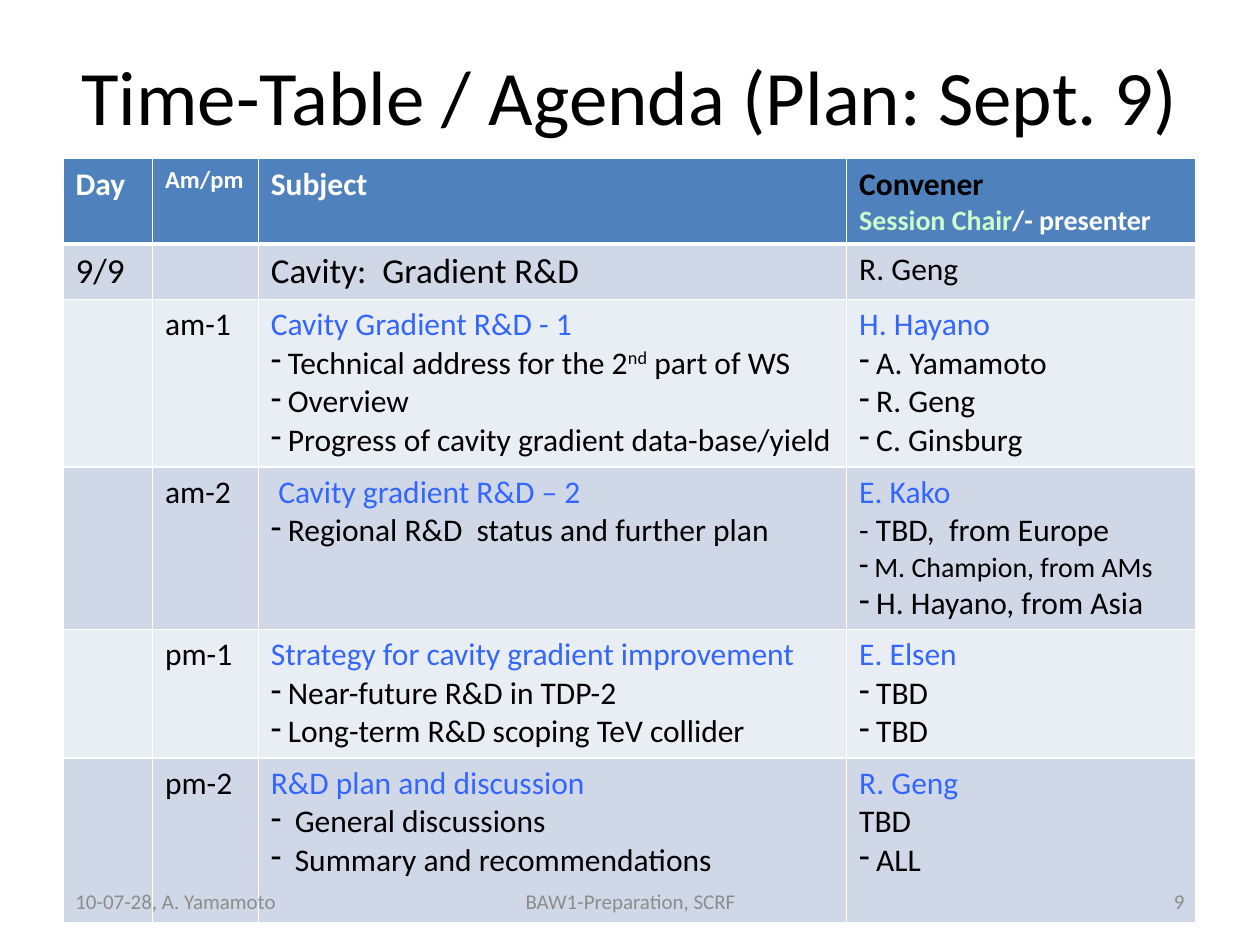
from lxml.etree import SubElement
from pptx import Presentation
from pptx.dml.color import RGBColor
from pptx.enum.text import MSO_ANCHOR, PP_ALIGN
from pptx.oxml.ns import qn
from pptx.util import Inches, Pt

BLACK, WHITE, GRAY = "000000", "FFFFFF", "8C8C8C"
TOPIC_BLUE, CHAIR_GREEN, HEADER_BLUE = "3366FF", "CCFFCC", "4F81BD"
BANDS = ["D0D8E8", "E9EDF4"]


def rgb(color):
    return RGBColor.from_string(color)


def write(paragraph, text, size=18, color=BLACK, bold=False, align=None):
    """Add text to a paragraph; parts between ^ marks are superscript."""
    if align is not None:
        paragraph.alignment = align
    for i, part in enumerate(text.split("^")):
        run = paragraph.add_run()
        run.text = part
        run.font.name = "Calibri"
        run.font.size = Pt(size)
        run.font.bold = bold
        run.font.color.rgb = rgb(color)
        if i % 2:
            run._r.get_or_add_rPr().set("baseline", "30000")


presentation = Presentation()
presentation.slide_width, presentation.slide_height = Inches(10), Inches(7.5)
slide = presentation.slides.add_slide(presentation.slide_layouts[5])

# Title
title = slide.shapes.title
title.left, title.top = Inches(0.5), Inches(0.3)
title.width, title.height = Inches(9), Inches(0.91)
title.text_frame.vertical_anchor = MSO_ANCHOR.MIDDLE
write(title.text_frame.paragraphs[0], "Time-Table / Agenda (Plan: Sept. 9)",
      size=44, align=PP_ALIGN.CENTER)

# Agenda grid
column_widths = [0.71, 0.84, 4.67, 2.77]
row_heights = [0.67, 0.44, 1.33, 1.29, 1.02, 1.31]
agenda = slide.shapes.add_table(
    len(row_heights), len(column_widths), Inches(0.5), Inches(1.26),
    Inches(sum(column_widths)), Inches(sum(row_heights))).table
for column, width in zip(agenda.columns, column_widths):
    column.width = Inches(width)
for row, height in zip(agenda.rows, row_heights):
    row.height = Inches(height)

# Cell borders and fills
for r, row in enumerate(agenda.rows):
    for cell in row.cells:
        for side in ("lnL", "lnR", "lnT", "lnB"):
            thick = (r, side) in [(0, "lnB"), (1, "lnT")]
            border = SubElement(cell._tc.get_or_add_tcPr(), qn(f"a:{side}"),
                                w=str(Pt(3 if thick else 1)))
            SubElement(SubElement(border, qn("a:solidFill")),
                       qn("a:srgbClr"), val=WHITE)
        cell.fill.solid()
        cell.fill.fore_color.rgb = rgb(BANDS[(r - 1) % 2] if r else HEADER_BLUE)

# Header row and day row
for r, c, text, style in [
    (0, 0, "Day", dict(color=WHITE, bold=True)),
    (0, 1, "Am/pm", dict(size=14, color=WHITE, bold=True)),
    (0, 2, "Subject", dict(color=WHITE, bold=True)),
    (0, 3, "Convener", dict(bold=True)),
    (1, 0, "9/9", dict(size=20)),
    (1, 2, "Cavity:  Gradient R&D", dict(size=20)),
    (1, 3, "R. Geng", dict()),
]:
    write(agenda.cell(r, c).text_frame.paragraphs[0], text, **style)
roles = agenda.cell(0, 3).text_frame.add_paragraph()
write(roles, "Session Chair", size=16, color=CHAIR_GREEN, bold=True)
write(roles, "/- presenter", size=16, color=WHITE, bold=True)

# Sessions: slot, subject lines, people lines; "* " marks a dash bullet
sessions = [
    ("am-1",
     ["Cavity Gradient R&D - 1", "* Technical address for the 2^nd^ part of WS",
      "* Overview", "* Progress of cavity gradient data-base/yield"],
     ["H. Hayano", "* A. Yamamoto", "* R. Geng", "* C. Ginsburg"]),
    ("am-2",
     ["Cavity gradient R&D – 2", "* Regional R&D  status and further plan"],
     ["E. Kako", "- TBD,  from Europe", "* M. Champion, from AMs",
      "* H. Hayano, from Asia"]),
    ("pm-1",
     ["Strategy for cavity gradient improvement",
      "* Near-future R&D in TDP-2", "* Long-term R&D scoping TeV collider"],
     ["E. Elsen", "* TBD", "* TBD"]),
    ("pm-2",
     ["R&D plan and discussion", "* General discussions",
      "* Summary and recommendations"],
     ["R. Geng", "TBD", "* ALL"]),
]
small_lines = {"* M. Champion, from AMs": 16}
wide_gaps = {"* General discussions", "* Summary and recommendations"}
for r, (slot, subjects, people) in enumerate(sessions, start=2):
    write(agenda.cell(r, 1).text_frame.paragraphs[0], slot)
    for c, lines in [(2, subjects), (3, people)]:
        frame = agenda.cell(r, c).text_frame
        for i, line in enumerate(lines):
            paragraph = frame.add_paragraph() if i else frame.paragraphs[0]
            size = small_lines.get(line, 18)
            if line.startswith("* "):
                gap = Inches(0.19 if line in wide_gaps else size * 0.0075)
                properties = paragraph._p.get_or_add_pPr()
                properties.set("marL", str(gap))
                properties.set("indent", str(-gap))
                SubElement(properties, qn("a:buFontTx"))
                SubElement(properties, qn("a:buChar"), char="-")
            write(paragraph, line.removeprefix("* "), size=size,
                  color=BLACK if i else TOPIC_BLUE)

# The am-2 topic is set in slightly
am2_topic = agenda.cell(3, 2).text_frame.paragraphs[0]
am2_topic._p.get_or_add_pPr().set("marL", str(Inches(0.06)))

# Footer
for left, width, text, align in [
    (0.5, 2.33, "10-07-28, A. Yamamoto", PP_ALIGN.LEFT),
    (3.42, 3.17, "BAW1-Preparation, SCRF", PP_ALIGN.CENTER),
    (7.17, 2.33, "9", PP_ALIGN.RIGHT),
]:
    footer = slide.shapes.add_textbox(Inches(left), Inches(6.95),
                                      Inches(width), Inches(0.4)).text_frame
    footer.word_wrap = True
    footer.vertical_anchor = MSO_ANCHOR.MIDDLE
    write(footer.paragraphs[0], text, size=12, color=GRAY, align=align)

presentation.save("out.pptx")
